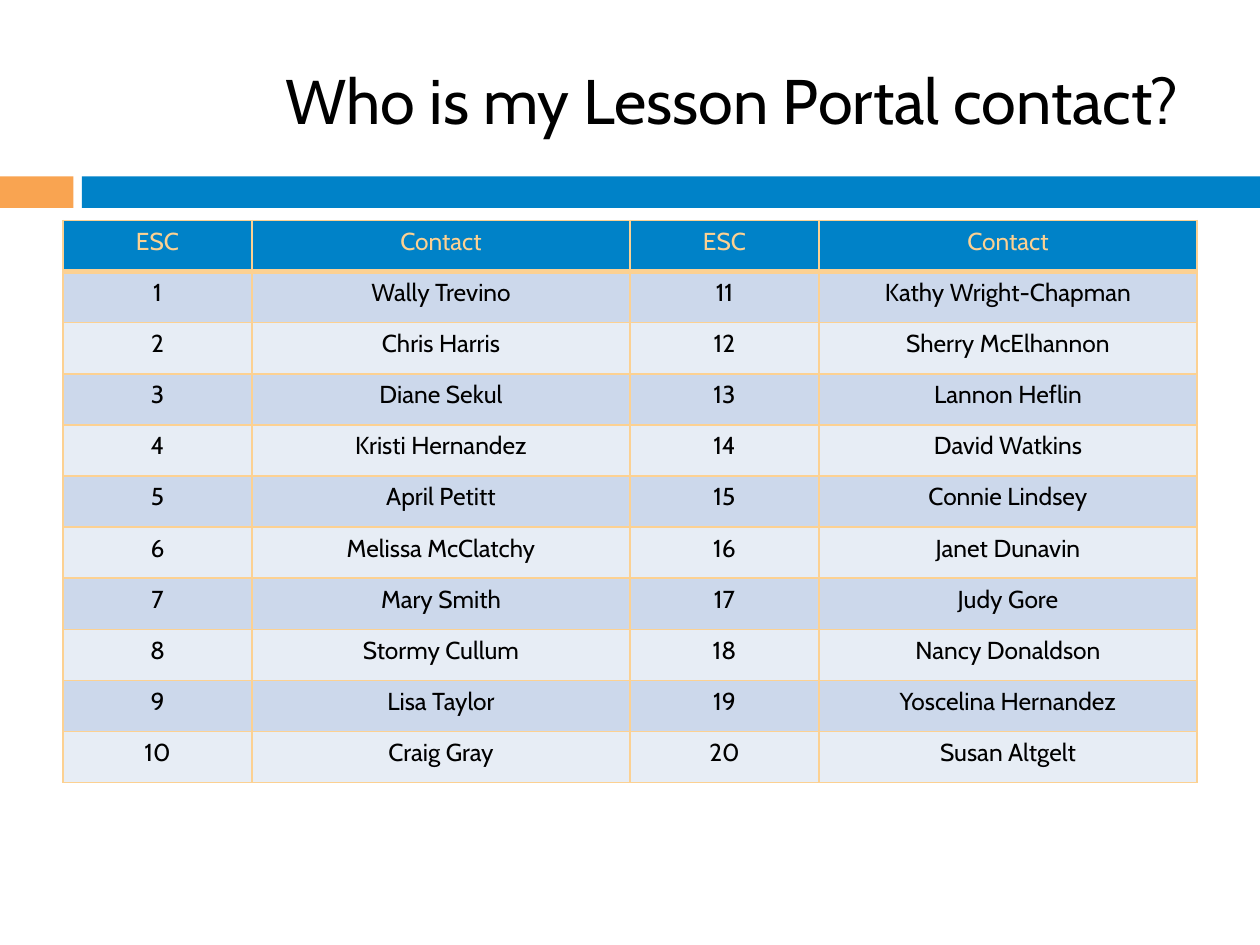
from lxml import etree
from pptx import Presentation
from pptx.dml.color import RGBColor
from pptx.enum.shapes import MSO_SHAPE
from pptx.enum.text import MSO_ANCHOR, PP_ALIGN
from pptx.oxml.ns import qn
from pptx.util import Pt

RECTANGLE = MSO_SHAPE.RECTANGLE
MIDDLE = MSO_ANCHOR.MIDDLE
LEFT, CENTER = PP_ALIGN.LEFT, PP_ALIGN.CENTER

BLACK = RGBColor(0x00, 0x00, 0x00)
ORANGE = RGBColor(0xF9, 0xA4, 0x51)
BLUE = RGBColor(0x00, 0x82, 0xC8)
SAND = RGBColor(0xFC, 0xD1, 0x92)
BAND_DARK = RGBColor(0xCC, 0xD8, 0xEB)
BAND_LIGHT = RGBColor(0xE7, 0xED, 0xF5)

TITLE_FONT = {"name": "Cabin", "size": Pt(36), "bold": False}
CELL_FONT = {"name": "Cabin", "size": Pt(14), "bold": False}

TITLE = "Who is my Lesson Portal contact?"
HEADER = ["ESC", "Contact"] * 2
CONTACTS = [
    "Wally Trevino", "Chris Harris", "Diane Sekul", "Kristi Hernandez",
    "April Petitt", "Melissa McClatchy", "Mary Smith", "Stormy Cullum",
    "Lisa Taylor", "Craig Gray", "Kathy Wright-Chapman", "Sherry McElhannon",
    "Lannon Heflin", "David Watkins", "Connie Lindsey", "Janet Dunavin",
    "Judy Gore", "Nancy Donaldson", "Yoscelina Hernandez", "Susan Altgelt",
]


def format_font(font, values, color):
    for name, value in values.items():
        setattr(font, name, value)
    font.color.rgb = color


def place_title(slide, left, top, width, height):
    title = slide.shapes.title
    title.left, title.top = Pt(left), Pt(top)
    title.width, title.height = Pt(width), Pt(height)
    frame = title.text_frame
    frame.text = TITLE
    frame.word_wrap = True
    frame.vertical_anchor = MIDDLE
    paragraph = frame.paragraphs[0]
    paragraph.alignment = LEFT
    format_font(paragraph.runs[0].font, TITLE_FONT, BLACK)


def add_divider(slide, left, top, width, height):
    accent_width, gap = 42, 4.8
    rule_left = left + accent_width + gap
    bars = [(left, accent_width, ORANGE),
            (rule_left, left + width - rule_left, BLUE)]
    for bar_left, bar_width, color in bars:
        bar = slide.shapes.add_shape(
            RECTANGLE, Pt(bar_left), Pt(top), Pt(bar_width), Pt(height))
        bar.shadow.inherit = False
        bar.fill.solid()
        bar.fill.fore_color.rgb = color
        bar.line.fill.background()


def set_borders(cell, widths):
    properties = cell._tc.get_or_add_tcPr()
    for side, width in widths.items():
        line = etree.SubElement(properties, qn(f"a:ln{side}"), w=str(Pt(width)))
        fill = etree.SubElement(line, qn("a:solidFill"))
        etree.SubElement(fill, qn("a:srgbClr"), val=str(SAND))


def fill_cell(cell, text, fill, color, bottom_border):
    # Borders have to come before the fill in the cell properties
    set_borders(cell, {"L": 1, "R": 1, "T": 1, "B": bottom_border})
    cell.fill.solid()
    cell.fill.fore_color.rgb = fill
    cell.text = text
    paragraph = cell.text_frame.paragraphs[0]
    paragraph.alignment = CENTER
    format_font(paragraph.runs[0].font, CELL_FONT, color)


def add_contact_table(slide, left, top, width, height):
    # The second half of the contacts stands beside the first
    half = len(CONTACTS) // 2
    rows = [HEADER] + [
        [str(i + 1), CONTACTS[i], str(i + half + 1), CONTACTS[i + half]]
        for i in range(half)]
    table = slide.shapes.add_table(
        len(rows), len(HEADER), Pt(left), Pt(top), Pt(width), Pt(height)).table

    # Contact columns are twice as wide as ESC columns
    for column, share in zip(table.columns, [1, 2, 1, 2]):
        column.width = Pt(width * share / 6)
    for row in table.rows:
        row.height = Pt(height / len(rows))

    for r, texts in enumerate(rows):
        if r == 0:
            style = (BLUE, SAND, 3)
        else:
            style = (BAND_DARK if r % 2 else BAND_LIGHT, BLACK, 1)
        for c, text in enumerate(texts):
            fill_cell(table.cell(r, c), text, *style)


def main():
    presentation = Presentation()
    presentation.slide_width, presentation.slide_height = Pt(720), Pt(540)
    title_only = presentation.slide_layouts[5]
    slide = presentation.slides.add_slide(title_only)
    add_divider(slide, 0, 100.8, 720, 18)
    place_title(slide, 156, 18, 534, 78)
    add_contact_table(slide, 36, 126, 648, 321.2)
    presentation.save("out.pptx")


if __name__ == "__main__":
    main()
